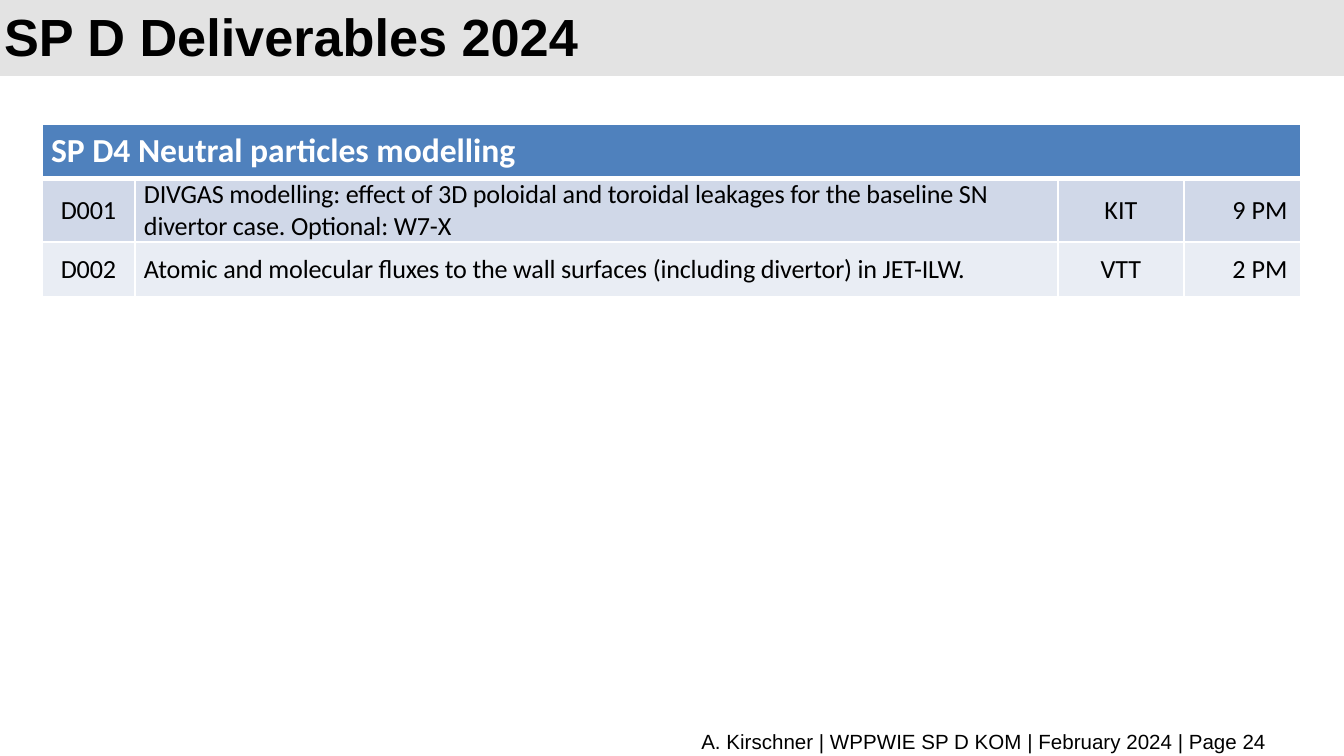
from dataclasses import dataclass
from typing import Any

from lxml import etree
from pptx import Presentation
from pptx.dml.color import RGBColor
from pptx.enum.shapes import MSO_SHAPE
from pptx.enum.text import MSO_ANCHOR, PP_ALIGN
from pptx.oxml.ns import qn
from pptx.util import Emu, Pt

EMU_PER_PX = 914400 / 134.4
BLACK = RGBColor(0x00, 0x00, 0x00)
WHITE = RGBColor(0xFF, 0xFF, 0xFF)
BANNER_GREY = RGBColor(0xE3, 0xE3, 0xE3)
HEADER_BLUE = RGBColor(0x4F, 0x81, 0xBD)
BAND_DARK = RGBColor(0xD0, 0xD8, 0xE8)
BAND_LIGHT = RGBColor(0xE9, 0xED, 0xF4)
RECTANGLE = MSO_SHAPE.RECTANGLE
TOP, MIDDLE = MSO_ANCHOR.TOP, MSO_ANCHOR.MIDDLE
LEFT, CENTER, RIGHT = PP_ALIGN.LEFT, PP_ALIGN.CENTER, PP_ALIGN.RIGHT

TITLE_FONT = {"name": "Arial", "size": Pt(28), "bold": True}
FOOTER_FONT = {"name": "Arial", "size": Pt(11)}
HEADER_FONT = {"name": "Calibri", "size": Pt(18), "bold": True}
BODY_FONT = {"name": "Calibri", "size": Pt(14), "bold": False}
TIGHT_INSETS = {"margin_left": 9, "margin_right": 9, "margin_top": 0, "margin_bottom": 0}


@dataclass(frozen=True)
class Column:
    width: int
    align: PP_ALIGN
    tight: bool


@dataclass(frozen=True)
class Deliverable:
    texts: tuple[str, str, str, str]
    fill: RGBColor


COLUMNS = (
    Column(93, CENTER, True),
    Column(923, LEFT, True),
    Column(126, CENTER, False),
    Column(117, RIGHT, False),
)
DELIVERABLES = (
    Deliverable(
        (
            "D001",
            "DIVGAS modelling: effect of 3D poloidal and toroidal leakages "
            "for the baseline SN divertor case. Optional: W7-X",
            "KIT",
            "9 PM",
        ),
        BAND_DARK,
    ),
    Deliverable(
        (
            "D002",
            "Atomic and molecular fluxes to the wall surfaces (including divertor) in JET-ILW.",
            "VTT",
            "2 PM",
        ),
        BAND_LIGHT,
    ),
)
ROW_HEIGHT = 55


def px(length: int) -> Emu:
    return Emu(round(length * EMU_PER_PX))


def write(frame: Any, text: str, font: dict[str, Any], color: RGBColor, align: PP_ALIGN) -> Any:
    """Fill the first paragraph of a text frame and return that paragraph."""
    para = frame.paragraphs[0]
    para.alignment = align
    span = para.add_run()
    span.text = text
    for name, value in font.items():
        setattr(span.font, name, value)
    span.font.color.rgb = color
    return para


def add_text(slide: Any, at: tuple[int, int, int, int], text: str,
             font: dict[str, Any], align: PP_ALIGN, anchor: MSO_ANCHOR) -> Any:
    frame = slide.shapes.add_textbox(*map(px, at)).text_frame
    frame.word_wrap = True
    frame.vertical_anchor = anchor
    return write(frame, text, font, BLACK, align)


def style_cell(cell: Any, fill: RGBColor, tight: bool, top: int = 1, bottom: int = 1) -> None:
    """Set white borders, widths in points, then the fill and insets."""
    properties = cell._tc.get_or_add_tcPr()
    for side, width in {"L": 1, "R": 1, "T": top, "B": bottom}.items():
        line = etree.SubElement(properties, qn(f"a:ln{side}"), w=str(Pt(width)))
        solid = etree.SubElement(line, qn("a:solidFill"))
        etree.SubElement(solid, qn("a:srgbClr"), val=str(WHITE))
    cell.fill.solid()
    cell.fill.fore_color.rgb = fill
    if tight:
        for name, inset in TIGHT_INSETS.items():
            setattr(cell, name, px(inset))


def add_deliverables(slide: Any) -> None:
    row_count = len(DELIVERABLES) + 1
    width = sum(column.width for column in COLUMNS)
    table = slide.shapes.add_table(
        row_count, len(COLUMNS), px(42), px(124), px(width), px(ROW_HEIGHT * row_count)
    ).table
    for table_column, column in zip(table.columns, COLUMNS):
        table_column.width = px(column.width)

    for index in range(len(COLUMNS)):
        style_cell(table.cell(0, index), HEADER_BLUE, True, bottom=3)
    header = table.cell(0, 0)
    header.merge(table.cell(0, len(COLUMNS) - 1))
    para = write(header.text_frame, "SP D4 Neutral particles modelling", HEADER_FONT, WHITE, LEFT)
    para.line_spacing = 1.15

    for row, deliverable in enumerate(DELIVERABLES, start=1):
        for index, (column, text) in enumerate(zip(COLUMNS, deliverable.texts)):
            cell = table.cell(row, index)
            style_cell(cell, deliverable.fill, column.tight, top=3 if row == 1 else 1)
            cell.vertical_anchor = MIDDLE
            para = write(cell.text_frame, text, BODY_FONT, BLACK, column.align)
            if column.tight:
                para.runs[0]._r.get_or_add_rPr().set("spc", "-10")


def main() -> None:
    deck = Presentation()
    deck.slide_width, deck.slide_height = px(1344), px(756)
    slide = deck.slides.add_slide(deck.slide_layouts[6])

    banner = slide.shapes.add_shape(RECTANGLE, 0, 0, deck.slide_width, px(76))
    banner.shadow.inherit = False
    banner.fill.solid()
    banner.fill.fore_color.rgb = BANNER_GREY
    banner.line.fill.background()

    title = add_text(slide, (-9, 12, 1109, 51), "SP D Deliverables 2024", TITLE_FONT, LEFT, MIDDLE)
    title.line_spacing = Pt(32)
    add_text(slide, (69, 722, 1211, 30),
             "A. Kirschner | WPPWIE SP D KOM | February 2024 | Page 24", FOOTER_FONT, RIGHT, TOP)
    add_deliverables(slide)
    deck.save("out.pptx")


if __name__ == "__main__":
    main()
